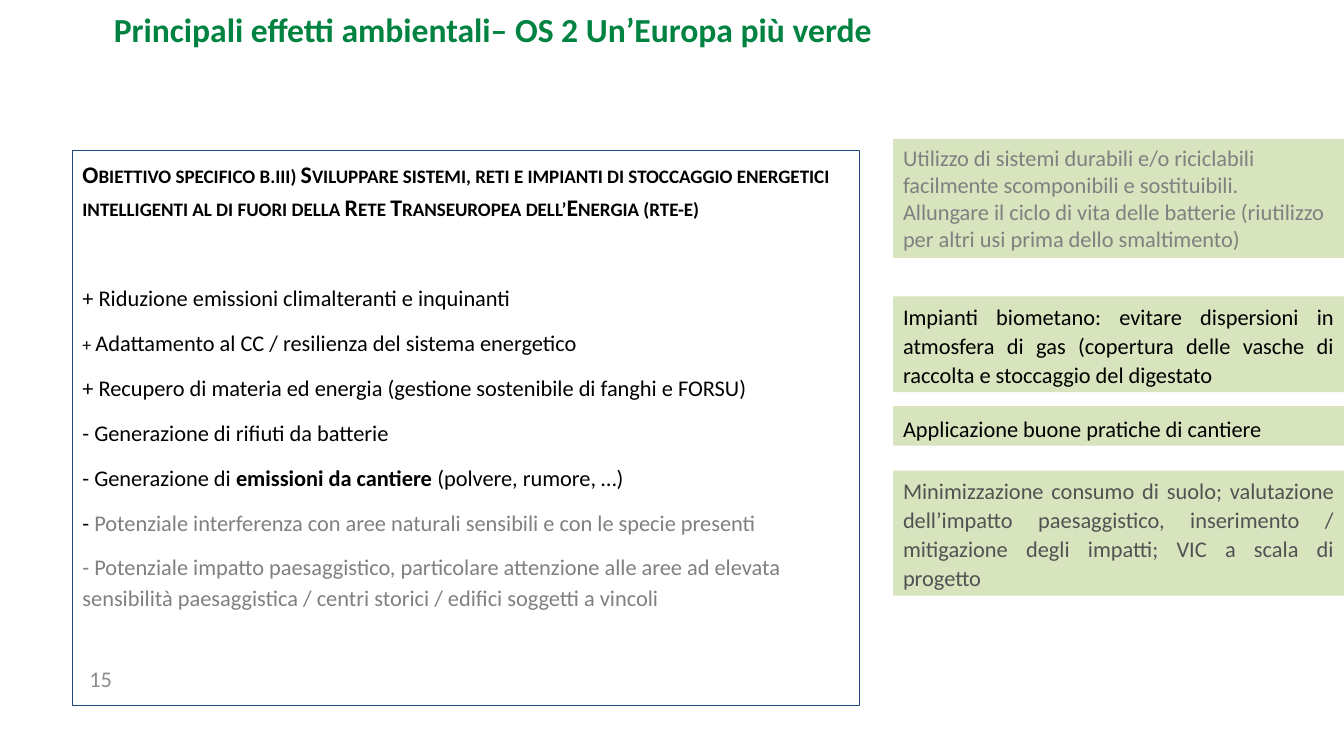
from dataclasses import dataclass, field
from typing import Optional

import pptx
import pptx.dml.color
import pptx.enum.shapes
import pptx.enum.text
import pptx.util

ANCHOR = pptx.enum.text.MSO_ANCHOR
ALIGN = pptx.enum.text.PP_ALIGN
GREEN, PALE_GREEN, NAVY = "008341", "D7E4BD", "1F497D"
BLACK, GREY, DARK_GREY, NUMBER_GREY = "000000", "808080", "525252", "8C8C8C"


@dataclass
class Run:
    text: str
    color: str = BLACK
    size: float = 16
    bold: bool = False
    small_caps: bool = False


@dataclass
class Para:
    runs: list[Run]
    format: dict = field(default_factory=dict)


@dataclass
class Box:
    """Position and size are percentages of the slide's width and height."""
    left: float
    top: float
    width: float
    height: float
    paras: list[Para]
    fill: Optional[str] = None
    line: Optional[str] = None
    frame: dict = field(default_factory=dict)


def rgb(color: str) -> pptx.dml.color.RGBColor:
    return pptx.dml.color.RGBColor.from_string(color)


def set_all(target, values: dict) -> None:
    for name, value in values.items():
        setattr(target, name, value)


def add_run(p, run: Run) -> None:
    r = p.add_run()
    r.text = run.text
    set_all(r.font, {"name": "Calibri", "size": pptx.util.Pt(run.size), "bold": run.bold})
    r.font.color.rgb = rgb(run.color)
    if run.small_caps:
        r.font._element.set("cap", "small")


def add_box(s, box: Box) -> None:
    place = (int(prs.slide_width * box.left / 100), int(prs.slide_height * box.top / 100),
             int(prs.slide_width * box.width / 100), int(prs.slide_height * box.height / 100))
    if box.fill or box.line:
        sp = s.shapes.add_shape(pptx.enum.shapes.MSO_SHAPE.RECTANGLE, *place)
        sp.shadow.inherit = False
        if box.fill:
            sp.fill.solid()
            sp.fill.fore_color.rgb = rgb(box.fill)
        else:
            sp.fill.background()
        if box.line:
            sp.line.color.rgb = rgb(box.line)
            sp.line.width = pptx.util.Pt(0.75)
        else:
            sp.line.fill.background()
    else:
        sp = s.shapes.add_textbox(*place)
    tf = sp.text_frame
    set_all(tf, {"word_wrap": True, "vertical_anchor": ANCHOR.TOP} | box.frame)
    for i, para in enumerate(box.paras):
        p = tf.paragraphs[0] if i == 0 else tf.add_paragraph()
        set_all(p, {"alignment": ALIGN.LEFT} | para.format)
        for run in para.runs:
            add_run(p, run)


# Paragraph formats
HEADING = {"line_spacing": 1.15, "space_after": pptx.util.Pt(42.5)}
EFFECT = {"line_spacing": 1.15, "space_after": pptx.util.Pt(10)}
JUSTIFIED = {"alignment": ALIGN.JUSTIFY, "line_spacing": 1.07, "space_after": pptx.util.Pt(6)}
MIDDLE = {"vertical_anchor": ANCHOR.MIDDLE}
TITLE_FRAME = MIDDLE | {"margin_left": pptx.util.Inches(0.13),
                        "margin_right": pptx.util.Inches(0.13)}

# Environmental effects of the objective
heading = Run("Obiettivo specifico b.iii) Sviluppare sistemi, reti e impianti di stoccaggio "
              "energetici intelligenti al di fuori della Rete Transeuropea dell’Energia (rte-e)",
              size=17, bold=True, small_caps=True)
effects = [
    [Run("+ Riduzione emissioni climalteranti e inquinanti")],
    [Run("+ ", small_caps=True), Run("Adattamento al CC / resilienza del sistema energetico")],
    [Run("+ Recupero di materia ed energia (gestione sostenibile di fanghi e FORSU)")],
    [Run("- Generazione di rifiuti da batterie")],
    [Run("- Generazione di "), Run("emissioni da cantiere ", bold=True),
     Run("(polvere, rumore, …)")],
    [Run("- "), Run("Potenziale interferenza con aree naturali sensibili e con le specie "
                    "presenti", GREY)],
    [Run("- Potenziale impatto paesaggistico, particolare attenzione alle aree ad elevata "
         "sensibilità paesaggistica / centri storici / edifici soggetti a vincoli", GREY)],
]

# Mitigation measures: top, height, paragraphs
measures = [
    (18.4, 15.73, [
        Para([Run("Utilizzo di sistemi durabili e/o riciclabili facilmente scomponibili e "
                  "sostituibili.", GREY)]),
        Para([Run("Allungare il ciclo di vita delle batterie (riutilizzo per altri usi prima "
                  "dello smaltimento)", GREY)])]),
    (39.2, 12.67, [
        Para([Run("Impianti biometano: evitare dispersioni in atmosfera di gas (copertura "
                  "delle vasche di raccolta e stoccaggio del digestato")], JUSTIFIED)]),
    (53.73, 5.2, [
        Para([Run("Applicazione buone pratiche di cantiere")], {"line_spacing": 1.15})]),
    (62.27, 16.53, [
        Para([Run("Minimizzazione consumo di suolo; valutazione dell’impatto paesaggistico, "
                  "inserimento / mitigazione degli impatti; VIC a scala di progetto",
                  DARK_GREY)], JUSTIFIED)]),
]

boxes = [
    Box(5.4, 87.07, 4.2, 5.33, [Para([Run("15", NUMBER_GREY)], {"alignment": ALIGN.CENTER})],
        frame=MIDDLE),
    Box(7.5, -1.07, 77.78, 9.87,
        [Para([Run("Principali effetti ambientali– OS 2 Un’Europa più verde", GREEN, 24, True)])],
        frame=TITLE_FRAME),
    Box(5.4, 19.87, 58.58, 73.47,
        [Para([heading], HEADING)] + [Para(runs, EFFECT) for runs in effects], line=NAVY),
]
boxes += [Box(66.45, top, 33.55, height, paras, fill=PALE_GREEN)
          for top, height, paras in measures]

# Slide
prs = pptx.Presentation()
prs.slide_width = pptx.util.Inches(13.33)
prs.slide_height = pptx.util.Inches(7.5)
s = prs.slides.add_slide(prs.slide_layouts[6])
for box in boxes:
    add_box(s, box)
prs.save("out.pptx")
